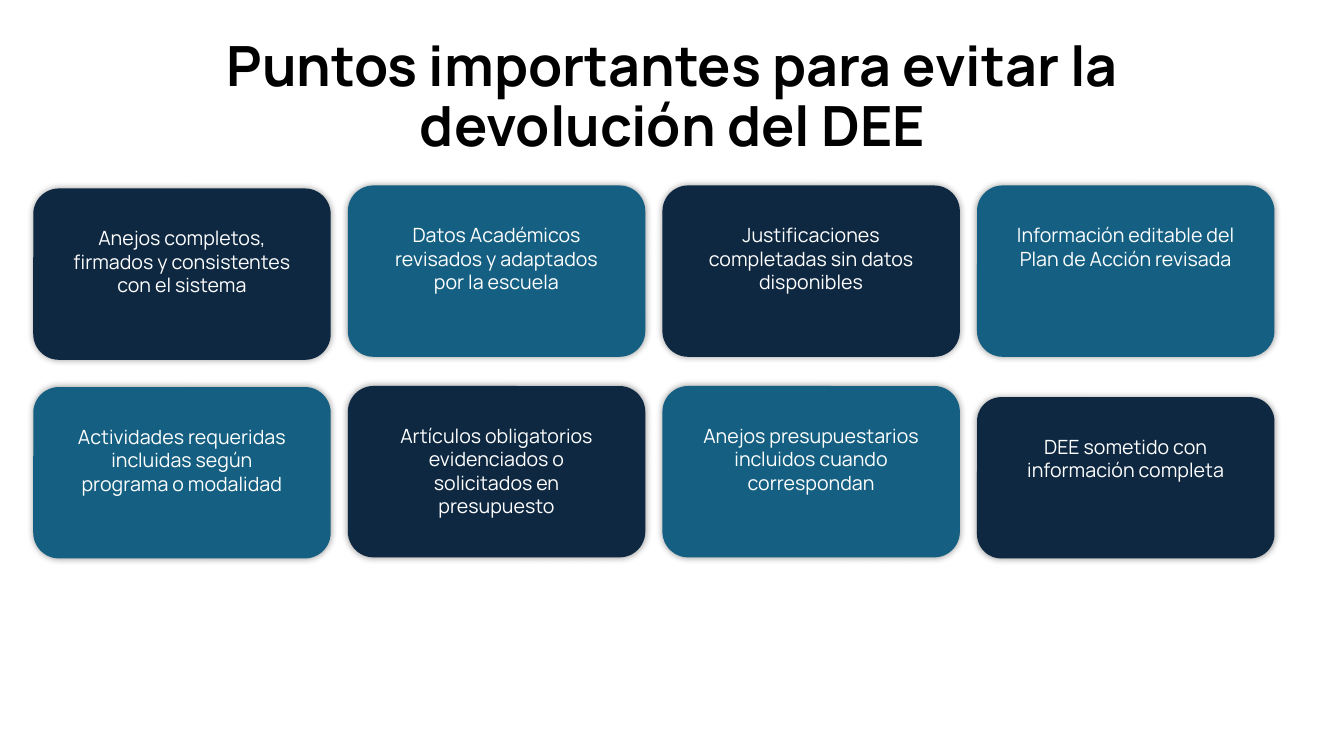
from lxml.etree import SubElement
from pptx import Presentation
from pptx.dml.color import RGBColor
from pptx.enum.shapes import MSO_SHAPE
from pptx.enum.text import MSO_ANCHOR, MSO_AUTO_SIZE, PP_ALIGN
from pptx.oxml.ns import qn
from pptx.util import Inches, Pt

COLORS = {
    "navy": "0E2841",
    "teal": "156082",
    "white": "FFFFFF",
    "black": "000000",
}
FONT = "Manrope"
COLUMNS = 4
GRID_LEFT, GRID_TOP = 0.33, 1.84
COLUMN_STEP, ROW_STEP = 3.12, 1.99
CARD_WIDTH, CARD_HEIGHT = 2.95, 1.7

CARDS = [
    ("Anejos completos, firmados y consistentes con el sistema", 0.03, CARD_HEIGHT),
    ("Datos Académicos revisados y adaptados por la escuela", 0, CARD_HEIGHT),
    ("Justificaciones completadas sin datos disponibles", 0, CARD_HEIGHT),
    ("Información editable del Plan de Acción revisada", 0, CARD_HEIGHT),
    ("Actividades requeridas incluidas según programa o modalidad", 0.01, CARD_HEIGHT),
    ("Artículos obligatorios evidenciados o solicitados en presupuesto", 0, CARD_HEIGHT),
    ("Anejos presupuestarios incluidos cuando correspondan", 0, CARD_HEIGHT),
    ("DEE sometido con información completa", 0.11, 1.6),
]


class SlideBuilder:
    def __init__(self, prs):
        self.slide = prs.slides.add_slide(prs.slide_layouts[5])

    def color(self, name):
        return RGBColor.from_string(COLORS[name])

    def run(self, p, text, size, color, bold=False):
        p.alignment = PP_ALIGN.CENTER
        r = p.add_run()
        r.text = text
        r.font.name = FONT
        r.font.size = Pt(size)
        r.font.bold = bold
        r.font.color.rgb = self.color(color)

    def title(self, text):
        sp = self.slide.shapes.title
        sp.left, sp.top = Inches(0.92), Inches(0.4)
        sp.width, sp.height = Inches(11.5), Inches(1.15)
        tf = sp.text_frame
        tf.word_wrap = True
        tf.auto_size = MSO_AUTO_SIZE.NONE
        tf.vertical_anchor = MSO_ANCHOR.MIDDLE
        p = tf.paragraphs[0]
        p.line_spacing = 0.9
        p.space_before = Pt(0)
        self.run(p, text, 39.6, "black", bold=True)

    def shadow(self, sp):
        sp.shadow.inherit = False
        effects = sp._element.spPr.find(qn("a:effectLst"))
        outer = SubElement(effects, qn("a:outerShdw"), blurRad=str(Pt(5)),
                           dist="0", dir="0", algn="ctr", rotWithShape="0")
        tint = SubElement(outer, qn("a:srgbClr"), val=COLORS["black"])
        SubElement(tint, qn("a:alpha"), val="40000")

    def card(self, column, row, text, fill, drop, height):
        sp = self.slide.shapes.add_shape(
            MSO_SHAPE.ROUNDED_RECTANGLE,
            Inches(GRID_LEFT + column * COLUMN_STEP),
            Inches(GRID_TOP + row * ROW_STEP + drop),
            Inches(CARD_WIDTH), Inches(height))
        sp.adjustments[0] = 0.15
        sp.fill.solid()
        sp.fill.fore_color.rgb = self.color(fill)
        sp.line.fill.background()
        self.shadow(sp)
        tf = sp.text_frame
        tf.word_wrap = True
        tf.vertical_anchor = MSO_ANCHOR.TOP
        tf.margin_left = tf.margin_right = tf.margin_top = Inches(0.3)
        tf.margin_bottom = Inches(0.2)
        self.run(tf.paragraphs[0], text, 14, "white")


def main():
    prs = Presentation()
    prs.slide_width, prs.slide_height = Inches(13.33), Inches(7.5)
    s = SlideBuilder(prs)
    s.title("Puntos importantes para evitar la devolución del DEE")
    for i, (text, drop, height) in enumerate(CARDS):
        row, column = divmod(i, COLUMNS)
        fill = "teal" if (row + column) % 2 else "navy"
        s.card(column, row, text, fill, drop, height)
    prs.save("out.pptx")


if __name__ == "__main__":
    main()
